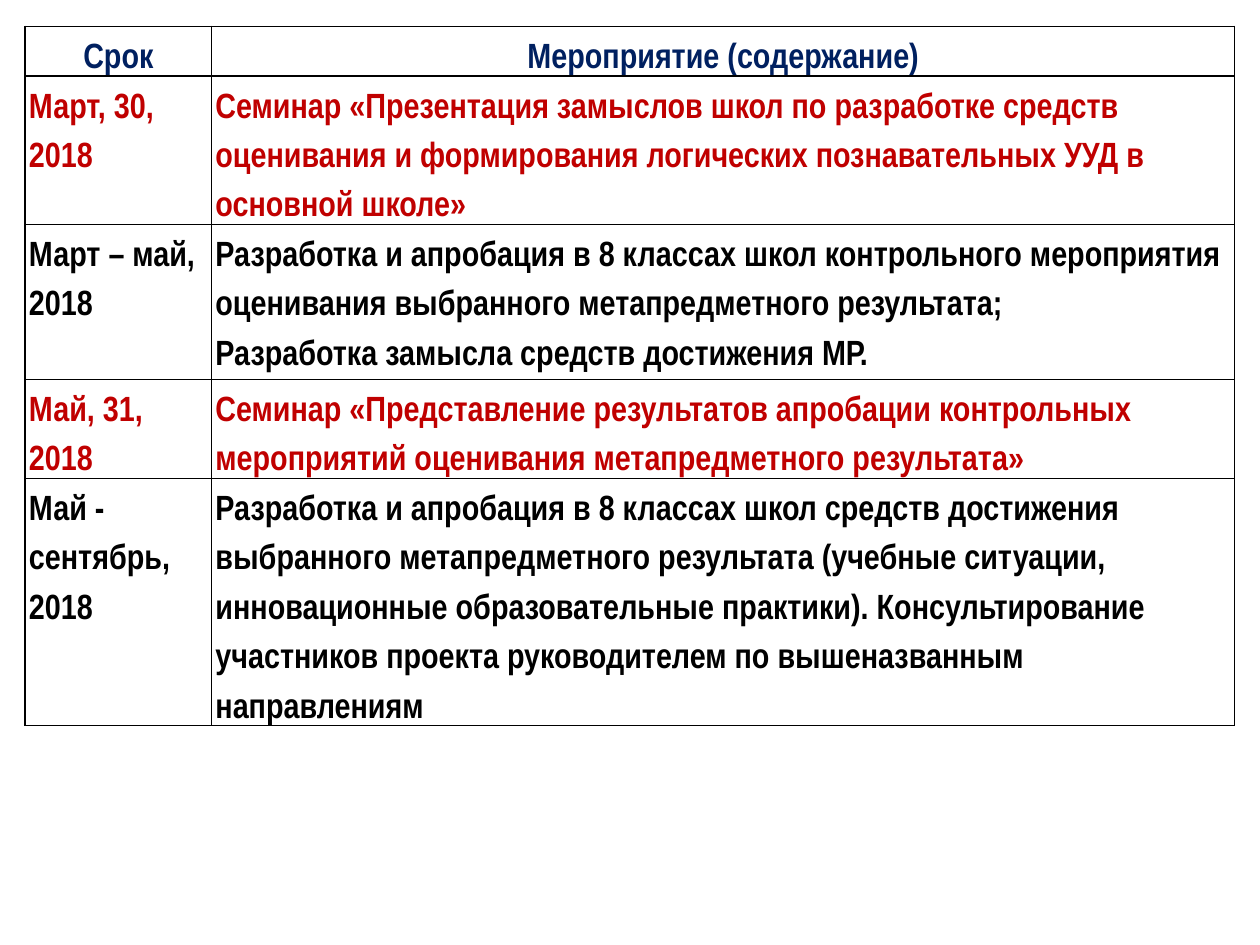
from lxml import etree
from pptx import Presentation
from pptx.dml.color import RGBColor
from pptx.enum.text import PP_ALIGN
from pptx.oxml.ns import qn
from pptx.util import Inches, Pt

CENTER, LEFT = PP_ALIGN.CENTER, PP_ALIGN.LEFT
NAVY, RED, BLACK = "002060", "C00000", "000000"

COLUMN_WIDTHS = (1.48, 8.12)
SCHEDULE = [
    (0.24, NAVY, CENTER, "Срок", "Мероприятие (содержание)"),
    (0.36, RED, LEFT, "Март, 30, 2018",
     "Семинар «Презентация замыслов школ по разработке средств оценивания "
     "и формирования логических познавательных УУД в основной школе»"),
    (1.23, BLACK, LEFT, "Март – май, 2018",
     "Разработка и апробация в 8 классах школ контрольного мероприятия "
     "оценивания выбранного метапредметного результата;\n"
     "Разработка замысла средств достижения МР."),
    (0.24, RED, LEFT, "Май, 31, 2018",
     "Семинар «Представление результатов апробации контрольных "
     "мероприятий оценивания метапредметного результата»"),
    (0.59, BLACK, LEFT, "Май - сентябрь, 2018",
     "Разработка и апробация в 8 классах школ средств достижения "
     "выбранного метапредметного результата (учебные ситуации, "
     "инновационные образовательные практики). Консультирование "
     "участников проекта руководителем по вышеназванным направлениям"),
]
FONT = {"name": "Arial Narrow", "size": Pt(20), "bold": True}
MARGINS = {
    "margin_left": Inches(0.03), "margin_right": Inches(0.03),
    "margin_top": 0, "margin_bottom": 0,
}


def rgb(value):
    return RGBColor.from_string(value)


def apply(target, values):
    for name, value in values.items():
        setattr(target, name, value)


def add_borders(cell):
    properties = cell._tc.get_or_add_tcPr()
    for position, side in enumerate(("a:lnL", "a:lnR", "a:lnT", "a:lnB")):
        line = etree.Element(qn(side), w=str(Pt(1)))
        fill = etree.SubElement(line, qn("a:solidFill"))
        etree.SubElement(fill, qn("a:srgbClr"), val=BLACK)
        properties.insert(position, line)


def fill_cell(cell, text, color, alignment):
    apply(cell, MARGINS)
    cell.fill.background()
    add_borders(cell)
    cell.text = text
    for para in cell.text_frame.paragraphs:
        apply(para, {"alignment": alignment, "line_spacing": 1.5})
        for span in para.runs:
            apply(span.font, FONT)
            span.font.color.rgb = rgb(color)


deck = Presentation()
deck.slide_width, deck.slide_height = Inches(10), Inches(7.5)
page = deck.slides.add_slide(deck.slide_layouts[6])

table = page.shapes.add_table(
    len(SCHEDULE), len(COLUMN_WIDTHS), Inches(0.2), Inches(0.21),
    Inches(sum(COLUMN_WIDTHS)), Inches(sum(row[0] for row in SCHEDULE)),
).table
apply(table, {"first_row": False, "horz_banding": False})
for column, width in zip(table.columns, COLUMN_WIDTHS):
    column.width = Inches(width)
for row, (height, color, alignment, *texts) in zip(table.rows, SCHEDULE):
    row.height = Inches(height)
    for cell, text in zip(row.cells, texts):
        fill_cell(cell, text, color, alignment)

deck.save("out.pptx")
